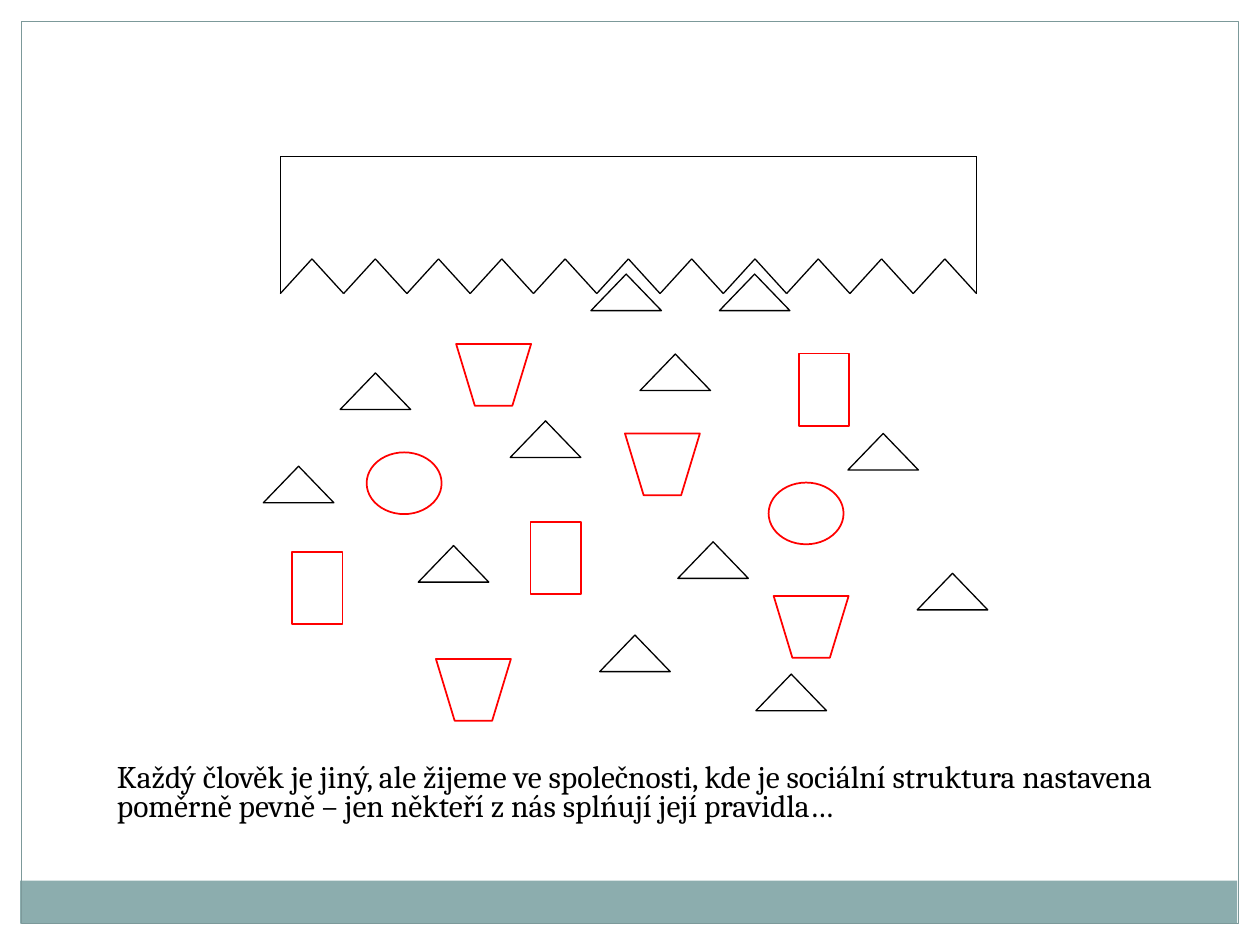
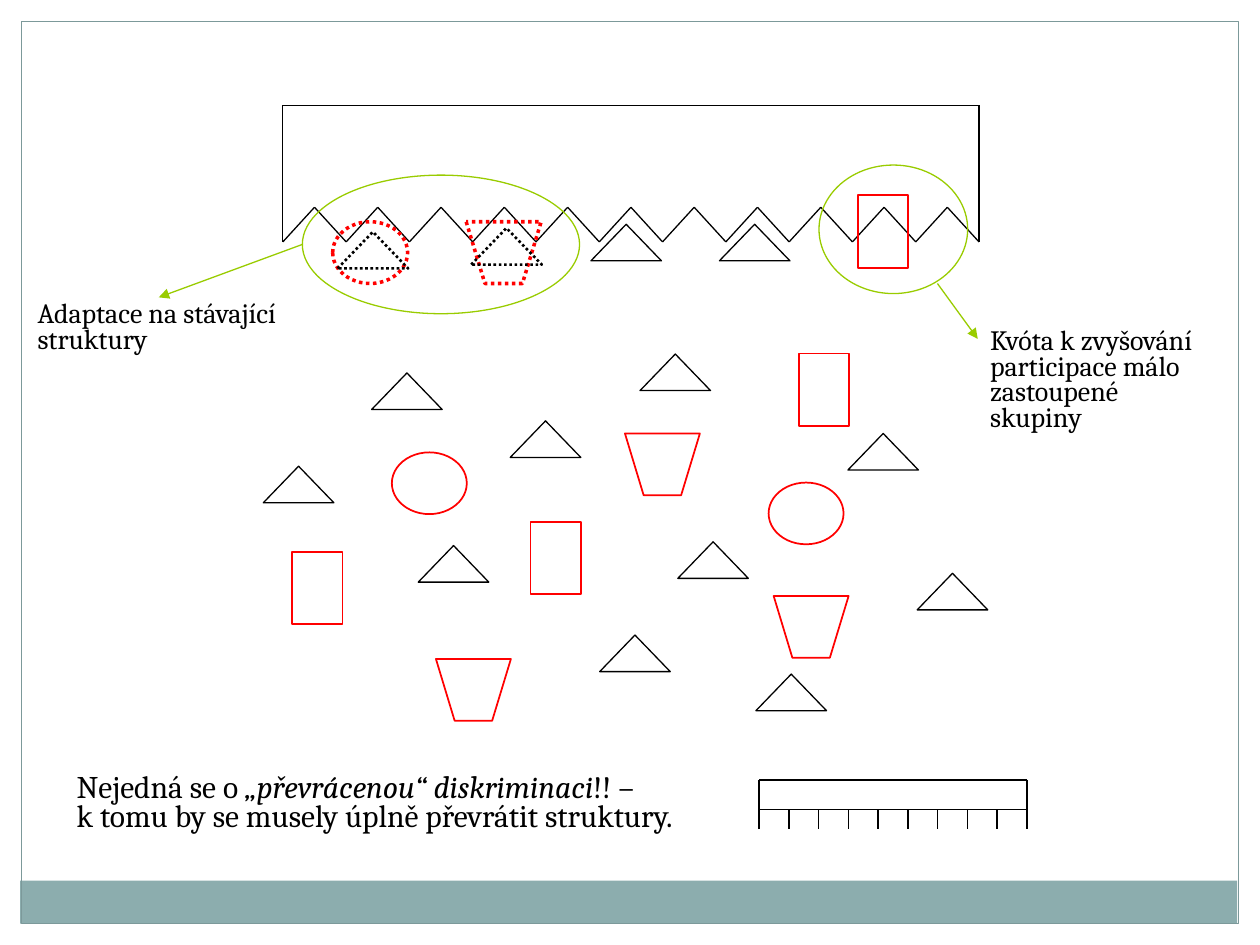
from dataclasses import dataclass
from itertools import pairwise
from typing import Any, NamedTuple, Optional

from lxml import etree
from pptx import Presentation
from pptx.dml.color import RGBColor
from pptx.enum import dml, shapes, text
from pptx.oxml import ns
from pptx.util import Emu, Inches, Pt


# Theme and grid: 100 columns by 75 rows over a 10 x 7.5 inch slide
@dataclass(frozen=True)
class Theme:
    band: str = "8CADAE"
    frame: str = "7C999A"
    ink: str = "000000"
    different: str = "FF0000"
    highlight: str = "99CC00"
    font: str = "Cambria"
    body_size: float = 18
    label_size: float = 16
    line_spacing: float = 0.76
    thin: float = 0.75
    medium: float = 1
    dotted_thin: float = 1.5
    dotted_thick: float = 2


class Point(NamedTuple):
    column: float
    row: float


class Box(NamedTuple):
    column: float
    row: float
    columns: float
    rows: float


class Kind(NamedTuple):
    """A kind of person: preset outline (None for the bucket), size and line."""
    outline: Optional[Any]
    columns: float
    rows: float
    colour: str
    weight: float
    dotted_weight: float


class Person(NamedTuple):
    kind: Kind
    column: float
    row: float
    dotted: bool = False


class Phrase(NamedTuple):
    words: str
    italic: bool = False
    break_after: bool = False


THEME = Theme()
SLIDE_WIDTH, SLIDE_HEIGHT = Inches(10), Inches(7.5)
COLUMNS, ROWS = 100, 75

PRESET = shapes.MSO_SHAPE
RED_LINE = (THEME.different, THEME.medium, THEME.dotted_thick)
TRIANGLE = Kind(PRESET.ISOSCELES_TRIANGLE, 5.6, 2.9, THEME.ink, THEME.thin, THEME.dotted_thin)
BUCKET = Kind(None, 5.95, 4.9, *RED_LINE)
OVAL = Kind(PRESET.OVAL, 5.95, 4.9, *RED_LINE)
BLOCK = Kind(PRESET.RECTANGLE, 4, 5.75, *RED_LINE)

# People who stand in the same place on both slides
CROWD = [
    *(Person(TRIANGLE, column, row) for column, row in (
        (33.2, 43.3), (20.9, 37), (40.5, 33.4), (53.8, 43), (60, 53.5),
        (47.6, 50.4), (67.3, 34.4), (72.8, 45.5), (50.8, 28.1))),
    *(Person(BUCKET, column, row) for column, row in (
        (61.4, 47.3), (34.6, 52.3), (49.6, 34.4))),
    Person(OVAL, 61, 38.3),
    *(Person(BLOCK, column, row) for column, row in (
        (63.4, 28.05), (23.2, 43.8), (42.1, 41.4))),
]
FITTING_COLUMNS = (46.9, 57.1)


def across(columns: float) -> Emu:
    return Emu(round(SLIDE_WIDTH * columns / COLUMNS))


def down(rows: float) -> Emu:
    return Emu(round(SLIDE_HEIGHT * rows / ROWS))


def place(box: Box) -> tuple[Emu, Emu, Emu, Emu]:
    return across(box.column), down(box.row), across(box.columns), down(box.rows)


# Drawing helpers
def format_outline(shape: Any, colour: str, weight: float, dotted: bool = False) -> None:
    shape.shadow.inherit = False
    shape.fill.background()
    shape.line.color.rgb = RGBColor.from_string(colour)
    shape.line.width = Pt(weight)
    if dotted:
        shape.line.dash_style = dml.MSO_LINE.ROUND_DOT


def draw_outline(slide: Any, preset: Any, box: Box, colour: str, weight: float) -> Any:
    shape = slide.shapes.add_shape(preset, *place(box))
    format_outline(shape, colour, weight)
    return shape


def draw_line(parent: Any, start: Point, end: Point, colour: str = THEME.ink,
              arrow: bool = False) -> None:
    connector = parent.shapes.add_connector(
        shapes.MSO_CONNECTOR.STRAIGHT,
        across(start.column), down(start.row), across(end.column), down(end.row))
    connector.line.color.rgb = RGBColor.from_string(colour)
    connector.line.width = Pt(THEME.thin)
    if arrow:
        etree.SubElement(connector.line._get_or_add_ln(), ns.qn("a:tailEnd"), type="triangle")
    etree.SubElement(connector._element.spPr, ns.qn("a:effectLst"))


def draw_path(parent: Any, points: list[Point]) -> None:
    for start, end in pairwise(points):
        draw_line(parent, start, end)


def draw_person(slide: Any, person: Person) -> None:
    kind = person.kind
    box = Box(person.column, person.row, kind.columns, kind.rows)
    if kind.outline is None:
        left, top, width, height = place(box)
        builder = slide.shapes.build_freeform(left, top)
        builder.add_line_segments([
            (left + width // 4, top + height),
            (left + width * 3 // 4, top + height),
            (left + width, top)], close=True)
        shape = builder.convert_to_shape()
    else:
        shape = slide.shapes.add_shape(kind.outline, *place(box))
    weight = kind.dotted_weight if person.dotted else kind.weight
    format_outline(shape, kind.colour, weight, person.dotted)


def draw_people(slide: Any, people: list[Person]) -> None:
    for person in people:
        draw_person(slide, person)


def draw_text(slide: Any, box: Box, size: float, space_before: float,
              phrases: list[Phrase]) -> None:
    frame = slide.shapes.add_textbox(*place(box)).text_frame
    frame.word_wrap = True
    frame.auto_size = text.MSO_AUTO_SIZE.SHAPE_TO_FIT_TEXT
    paragraph = frame.paragraphs[0]
    paragraph.line_spacing = THEME.line_spacing
    paragraph.space_before = Pt(space_before)
    for phrase in phrases:
        run = paragraph.add_run()
        run.text = phrase.words
        run.font.name = THEME.font
        run.font.size = Pt(size)
        run.font.italic = phrase.italic
        run.font.color.rgb = RGBColor.from_string(THEME.ink)
        if phrase.break_after:
            paragraph.add_line_break()


def draw_body(slide: Any, box: Box, phrases: list[Phrase]) -> None:
    draw_text(slide, box, THEME.body_size, 11.2, phrases)


def draw_label(slide: Any, box: Box, words: str) -> None:
    draw_text(slide, box, THEME.label_size, 10, [Phrase(words)])


# The rigid structure with triangular notches
def draw_toothed_structure(slide: Any, left: float, top: float) -> None:
    teeth, width, notch_top, height = 11, 55.25, 8.1, 10.85
    step = width / (2 * teeth)
    edge = [Point(left + i * step, top + (notch_top if i % 2 else height))
            for i in range(2 * teeth + 1)]
    corners = [Point(left + width, top), Point(left, top)]
    draw_path(slide.shapes.add_group_shape(), [*edge, *corners, edge[0]])


# The overturned structure with square notches
def draw_square_structure(slide: Any, left: float, top: float) -> None:
    slots, width, beam, height = 9, 21.25, 2.35, 3.9
    right = left + width
    group = slide.shapes.add_group_shape()
    draw_path(group, [Point(left, top + height), Point(left, top),
                      Point(right, top), Point(right, top + height)])
    draw_line(group, Point(left, top + beam), Point(right, top + beam))
    for i in range(1, slots):
        column = left + i * width / slots
        draw_line(group, Point(column, top + beam), Point(column, top + height))


def add_framed_slide(presentation: Any) -> Any:
    slide = presentation.slides.add_slide(presentation.slide_layouts[6])
    band = slide.shapes.add_shape(PRESET.RECTANGLE, *place(Box(1.6, 69.9, 96.6, 3.4)))
    band.shadow.inherit = False
    band.fill.solid()
    band.fill.fore_color.rgb = RGBColor.from_string(THEME.band)
    band.line.fill.background()
    draw_outline(slide, PRESET.RECTANGLE, Box(1.7, 1.7, 96.6, 71.6), THEME.frame, THEME.thin)
    return slide


# Slide 1: a rigid structure that only some people fit
def build_rigid_structure(presentation: Any) -> None:
    slide = add_framed_slide(presentation)
    draw_toothed_structure(slide, 22.25, 12.45)
    draw_people(slide, [
        *CROWD,
        *(Person(TRIANGLE, column, 21.75) for column in FITTING_COLUMNS),
        Person(TRIANGLE, 27, 29.6),
        Person(BUCKET, 36.2, 27.3),
        Person(OVAL, 29.1, 35.9),
    ])
    draw_body(slide, Box(8.3, 60.3, 86.6, 5.6), [Phrase(
        "Každý člověk je jiný, ale žijeme ve společnosti, kde je sociální struktura "
        "nastavena poměrně pevně – jen někteří z nás splńují její pravidla…")])


# Slide 2: adaptation and quotas
def build_adaptation_and_quota(presentation: Any) -> None:
    slide = add_framed_slide(presentation)
    draw_toothed_structure(slide, 22.45, 8.35)
    draw_people(slide, [
        *CROWD,
        *(Person(TRIANGLE, column, 17.8) for column in FITTING_COLUMNS),
        Person(TRIANGLE, 29.5, 29.6),
        Person(OVAL, 31.1, 35.9),
        Person(BUCKET, 37, 17.6, dotted=True),
        Person(TRIANGLE, 37.4, 18.1, dotted=True),
        Person(OVAL, 26.4, 17.6, dotted=True),
        Person(TRIANGLE, 26.8, 18.4, dotted=True),
        Person(BLOCK, 68.1, 15.5),
    ])

    # Highlighted groups with their labels
    for ring in (Box(24, 13.9, 22, 11), Box(65, 13.1, 11.8, 10.2)):
        draw_outline(slide, PRESET.OVAL, ring, THEME.highlight, THEME.thin)
    draw_line(slide, Point(24, 19.4), Point(12.6, 23.6), THEME.highlight, arrow=True)
    draw_line(slide, Point(74.4, 22.5), Point(77.6, 26.9), THEME.highlight, arrow=True)
    draw_label(slide, Box(2, 23.6, 21.3, 5.1), "Adaptace na stávající struktury")
    draw_label(slide, Box(77.6, 25.7, 19.7, 11.1),
               "Kvóta k zvyšování participace málo zastoupené skupiny")

    # Conclusion
    draw_body(slide, Box(5.1, 61.1, 53.6, 5.6), [
        Phrase("Nejedná se o "),
        Phrase("„převrácenou“ diskriminaci", italic=True),
        Phrase("!! – ", break_after=True),
        Phrase("k tomu by se musely úplně převrátit struktury."),
    ])
    draw_square_structure(slide, 60.25, 61.9)


def main() -> None:
    presentation = Presentation()
    presentation.slide_width, presentation.slide_height = SLIDE_WIDTH, SLIDE_HEIGHT
    build_rigid_structure(presentation)
    build_adaptation_and_quota(presentation)
    presentation.save("out.pptx")


if __name__ == "__main__":
    main()
